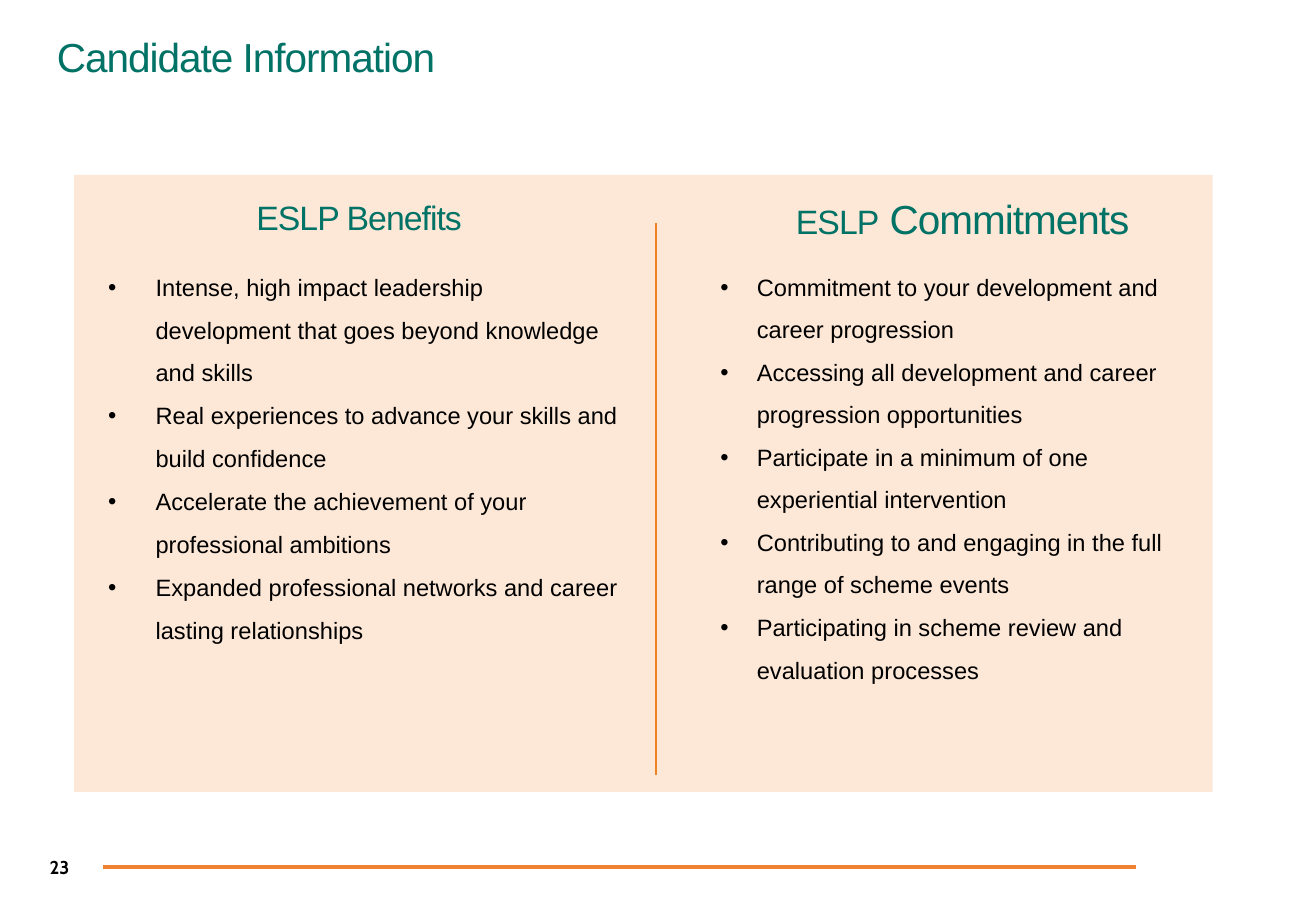
from dataclasses import dataclass

from lxml import etree
from pptx import Presentation
from pptx import util as u
from pptx.dml.color import RGBColor
from pptx.enum import shapes, text
from pptx.oxml.ns import qn


@dataclass(frozen=True)
class Theme:
    green: str = "007266"
    black: str = "000000"
    orange: str = "EF8233"
    rule: str = "F08225"
    peach: str = "F9BC86"
    face: str = "Arial"
    digit: str = "Cabin"
    title: int = 24
    head: int = 20
    body: int = 14
    page: int = 11


def px(n):
    """Turn px, 100 to the inch, into EMU."""
    return u.Emu(n * 9144)


def apply(item, form):
    for key, value in form.items():
        setattr(item, key, value)


class Deck:
    def __init__(self, theme, wide, high):
        self.theme = theme
        self.prs = Presentation()
        apply(self.prs, {"slide_width": px(wide), "slide_height": px(high)})
        self.slide = self.prs.slides.add_slide(self.prs.slide_layouts[6])

    def panel(self, box, color, alpha):
        shape = self.slide.shapes.add_shape(
            shapes.MSO_SHAPE.RECTANGLE, *map(px, box))
        shape.shadow.inherit = False
        shape.fill.solid()
        shape.fill.fore_color.rgb = RGBColor.from_string(color)
        shape.line.fill.background()
        tint = shape.fill._xPr.find(".//" + qn("a:srgbClr"))
        etree.SubElement(tint, qn("a:alpha"), val=str(alpha * 1000))

    def line(self, ends, color, width):
        line = self.slide.shapes.add_connector(
            shapes.MSO_CONNECTOR.STRAIGHT, *map(px, ends))
        line.line.color.rgb = RGBColor.from_string(color)
        line.line.width = u.Pt(width)
        etree.SubElement(line._element.spPr, qn("a:effectLst"))

    def frame(self, box, inset=(0, 0), **form):
        frame = self.slide.shapes.add_textbox(*map(px, box)).text_frame
        side, top = map(px, inset)
        apply(frame, {"word_wrap": True, "margin_left": side,
                      "margin_right": side, "margin_top": top,
                      "margin_bottom": top, **form})
        return frame

    def run(self, para, words, size, color, track=0, **form):
        """Add a run; track is letter spacing in hundredths of a point."""
        run = para.add_run()
        run.text = words
        apply(run.font, {"name": self.theme.face, "size": u.Pt(size), **form})
        run.font.color.rgb = RGBColor.from_string(color)
        if track:
            run._r.get_or_add_rPr().set("spc", str(track))

    def head(self, box, parts, inset=(0, 0)):
        """Add a green heading from (words, size) parts."""
        para = self.frame(box, inset).paragraphs[0]
        para.line_spacing = 0.9
        for words, size in parts:
            self.run(para, words, size, self.theme.green, -60)

    def points(self, box, items, left, hang, gap=0, inset=(0, 0)):
        frame = self.frame(box, inset)
        for i, words in enumerate(items):
            para = frame.add_paragraph() if i else frame.paragraphs[0]
            props = para._p.get_or_add_pPr()
            apply(para, {"line_spacing": 1.5,
                         "space_before": u.Pt(gap if i else 0)})
            props.set("marL", str(px(left)))
            props.set("indent", str(-px(hang)))
            etree.SubElement(props, qn("a:buFont"), typeface=self.theme.face)
            etree.SubElement(props, qn("a:buChar"), char="•")
            self.run(para, words, self.theme.body, self.theme.black)

    def page(self, box, number):
        frame = self.frame(box, (10, 5),
                           vertical_anchor=text.MSO_ANCHOR.MIDDLE)
        self.run(frame.paragraphs[0], number, self.theme.page,
                 self.theme.black, name=self.theme.digit, bold=True)


GAINS = [
    "Intense, high impact leadership development that goes beyond "
    "knowledge and skills",
    "Real experiences to advance your skills and build confidence",
    "Accelerate the achievement of your professional ambitions",
    "Expanded professional networks and career lasting relationships",
]
DUTIES = [
    "Commitment to your development and career progression",
    "Accessing all development and career progression opportunities",
    "Participate in a minimum of one experiential intervention",
    "Contributing to and engaging in the full range of scheme events",
    "Participating in scheme review and evaluation processes",
]


def main():
    look = Theme()
    deck = Deck(look, 1083, 750)
    deck.line((85, 714, 935, 714), look.orange, 2.25)
    deck.page((31, 694, 136, 40), "23")
    deck.head((37, 26, 536, 47), [("Candidate Information", look.title)],
              (10, 5))
    deck.panel((61, 144, 937, 508), look.peach, 33)
    deck.line((540, 184, 540, 638), look.rule, 1)
    deck.head((211, 166, 214, 25), [("ESLP Benefits", look.head)])
    deck.head((655, 164, 280, 25),
              [("ESLP", look.head), (" Commitments", look.title)])
    deck.points((89, 213, 422, 452), GAINS, 39, 39, gap=0.5)
    deck.points((564, 208, 403, 359), DUTIES, 49, 30, inset=(10, 5))
    deck.prs.save("out.pptx")


if __name__ == "__main__":
    main()
